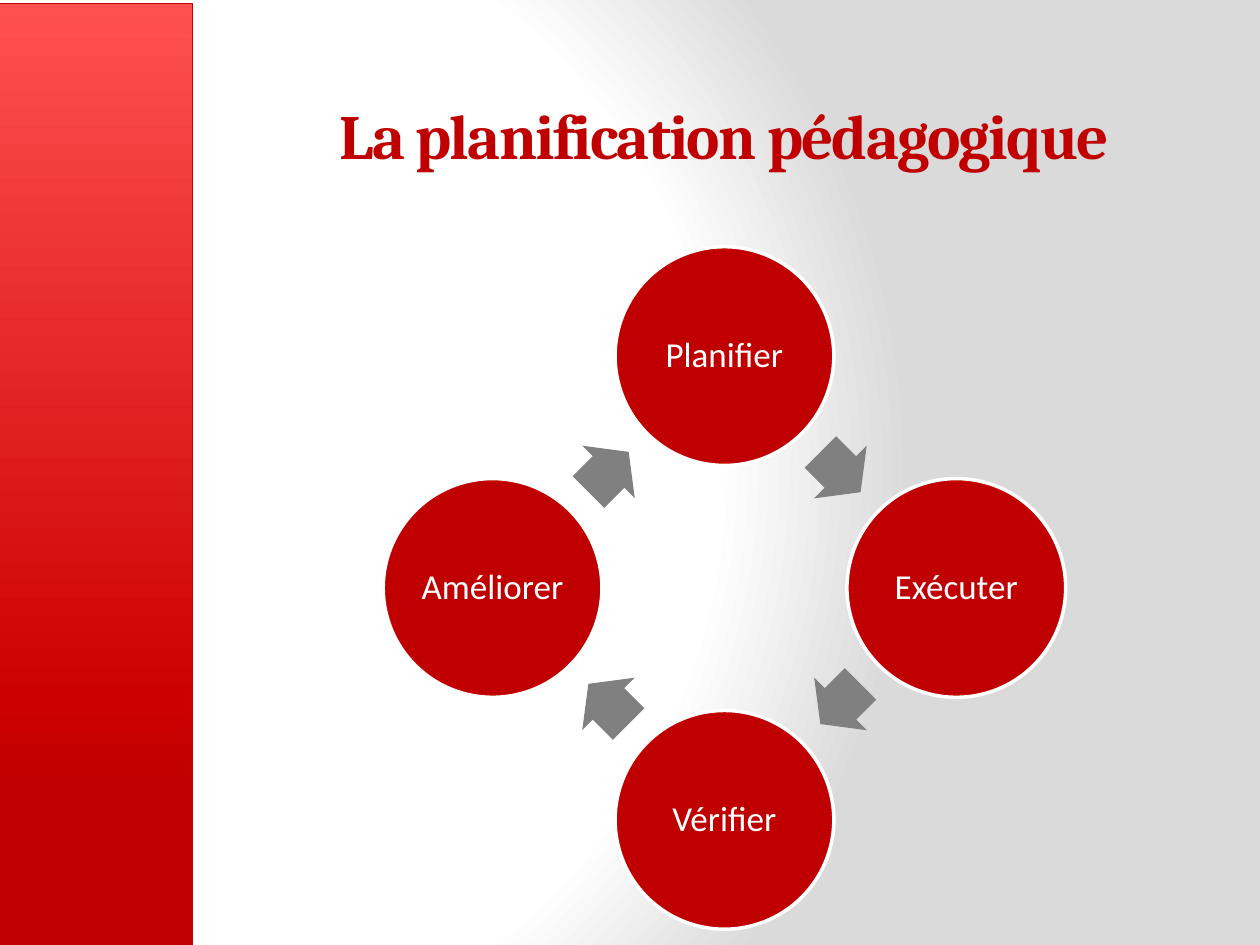
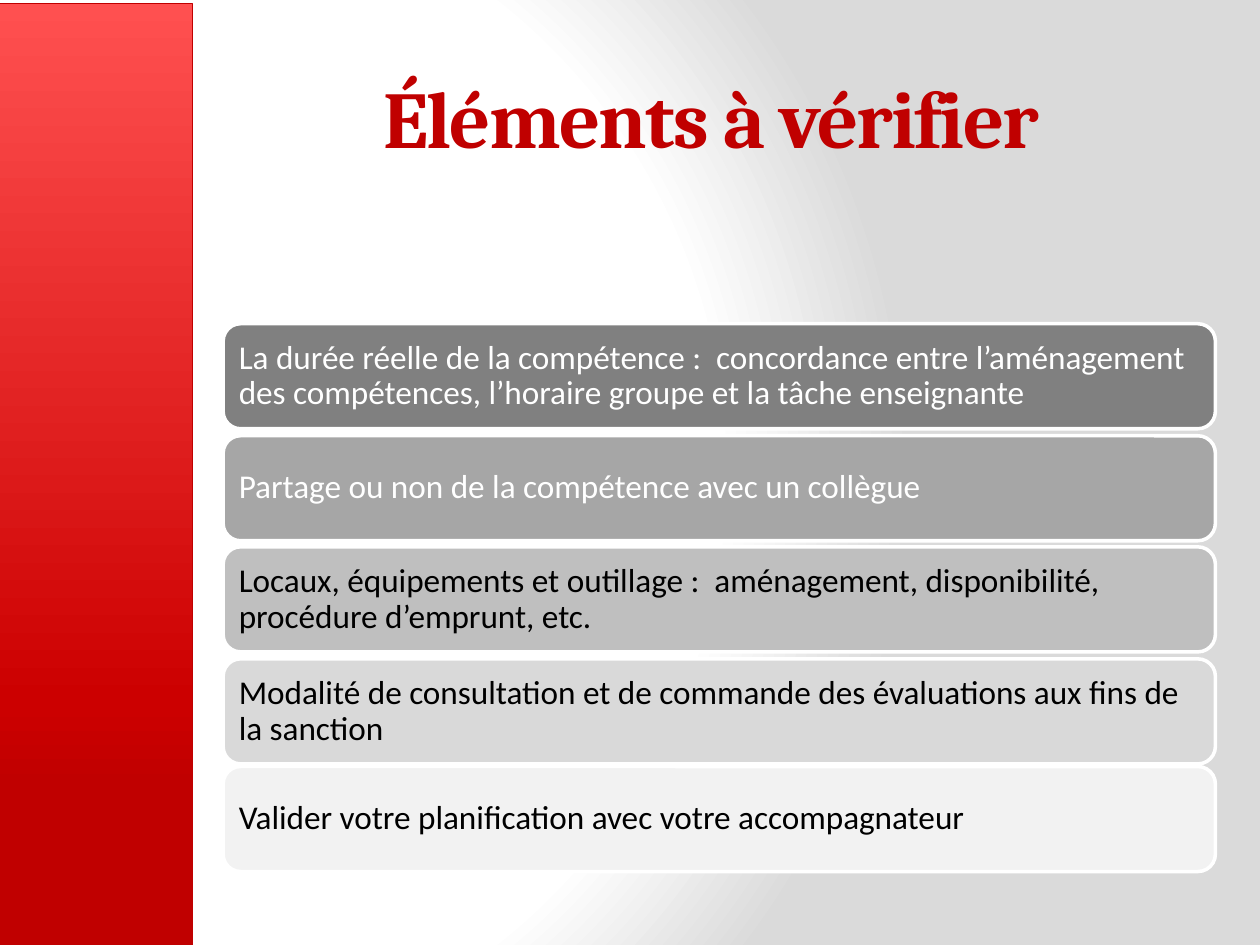
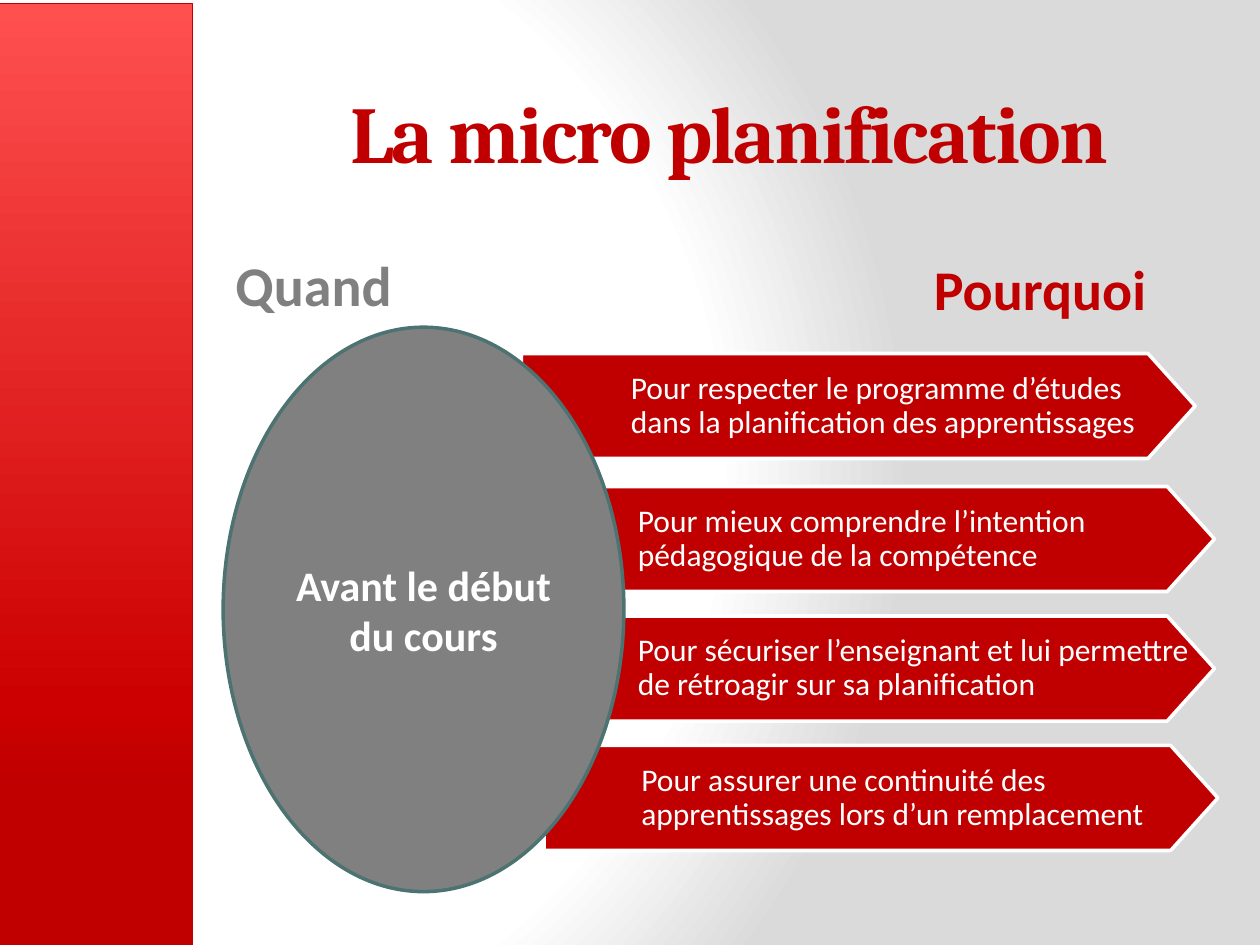
from dataclasses import dataclass

from pptx import Presentation
from pptx import oxml
from pptx.dml.color import RGBColor
from pptx.enum import shapes, text
from pptx.oxml import ns
from pptx.util import Pt


@dataclass(frozen=True)
class Theme:
    red: str = "C00000"
    grey: str = "808080"
    white: str = "FFFFFF"
    black: str = "000000"
    teal: str = "4C7372"
    band_stops: tuple = ((0, "FF5050"), (74, "CC0000"), (83, "C00000"), (100, "C00000"))
    page_stops: tuple = ((0, "FFFFFF"), (75, "FFFFFF"), (100, "DADADA"))
    bar_fills: tuple = ("808080", "A6A6A6", "BFBFBF", "D9D9D9", "F2F2F2")
    title_font: str = "Cambria"
    body_font: str = "Calibri"
    title: int = 46
    long_title: int = 36
    label: int = 32
    moment: int = 24
    step: int = 20
    check: int = 19
    reason: int = 18


theme = Theme()


def paint(shape, fill, line=None, width=2):
    """Give a shape a flat fill and an outline, without a shadow."""
    shape.shadow.inherit = False
    shape.fill.solid()
    shape.fill.fore_color.rgb = RGBColor.from_string(fill)
    if line:
        shape.line.color.rgb = RGBColor.from_string(line)
        shape.line.width = Pt(width)
    else:
        shape.line.fill.background()


def write(shape, wording, size, color, align="LEFT", anchor="MIDDLE", bold=False,
          insets=(7.2, 3.6, 7.2, 3.6), spacing=None, font=theme.body_font):
    """Set the single paragraph of a shape."""
    frame = shape.text_frame
    frame.text = wording
    frame.word_wrap = True
    frame.auto_size = text.MSO_AUTO_SIZE.NONE
    frame.vertical_anchor = text.MSO_ANCHOR[anchor]
    (frame.margin_left, frame.margin_top,
     frame.margin_right, frame.margin_bottom) = map(Pt, insets)
    para = frame.paragraphs[0]
    para.alignment = text.PP_ALIGN[align]
    para.line_spacing = spacing
    para.font.name = font
    para.font.size = Pt(size)
    para.font.bold = bold
    para.font.color.rgb = RGBColor.from_string(color)


deck = Presentation()
deck.slide_width, deck.slide_height = Pt(720), Pt(540)
master = deck.slide_master
layout = deck.slide_layouts.get_by_name("Title Only")

# Slides and their titles
titles = (
    ("La planification pédagogique", theme.long_title, (160, 32, 508, 90)),
    ("Éléments à vérifier ", theme.title, (127.5, 21.5, 567, 90)),
    ("La micro planification", theme.title, (127.5, 21.5, 578, 107)),
)
pages = []
for wording, size, place in titles:
    page = deck.slides.add_slide(layout)
    title = page.shapes.title
    title.left, title.top, title.width, title.height = map(Pt, place)
    write(title, wording, size, theme.red, "CENTER", bold=True, font=theme.title_font)
    title.text_frame.paragraphs[0].runs[0].font._element.set("spc", "-100")
    pages.append(page)
cycle_page, checks_page, micro_page = pages

# Shared background and red side band
band = cycle_page.shapes.add_shape(
    shapes.MSO_SHAPE.RECTANGLE, Pt(-12), Pt(2), Pt(122), Pt(540))
paint(band, theme.red, theme.red, 1)
layout.shapes.element.insert(2, band.element)
circle = ('<a:path path="circle">'
          '<a:fillToRect l="20000" t="50000" r="100000" b="50000"/></a:path>')
for fill, holder, stops, direction in (
    (band.fill, band.element, theme.band_stops, '<a:lin ang="5400000" scaled="0"/>'),
    (master.background.fill, master.element, theme.page_stops, circle),
):
    fill.gradient()
    flat = next(holder.iter(ns.qn("a:gradFill")))
    marks = "".join(f'<a:gs pos="{pos * 1000}"><a:srgbClr val="{color}"/></a:gs>'
                    for pos, color in stops)
    flat.getparent().replace(flat, oxml.parse_xml(
        f'<a:gradFill {ns.nsdecls("a")} rotWithShape="1">'
        f'<a:gsLst>{marks}</a:gsLst>{direction}</a:gradFill>'))

# Slide 1: cycle of four steps, each followed by an arrow
center_x, center_y, radius, diameter = 414, 336, 132.5, 125
arrow_width, arrow_height = 32.5, 42.5
steps = (("Planifier", 0, -1), ("Exécuter", 1, 0), ("Vérifier", 0, 1), ("Améliorer", -1, 0))
for index, (wording, across, down) in enumerate(steps):
    disc = cycle_page.shapes.add_shape(
        shapes.MSO_SHAPE.OVAL,
        Pt(center_x + across * radius - diameter / 2),
        Pt(center_y + down * radius - diameter / 2), Pt(diameter), Pt(diameter))
    paint(disc, theme.red, theme.white)
    write(disc, wording, theme.step, theme.white, "CENTER", insets=(2, 2, 2, 2), spacing=0.9)

    next_across, next_down = steps[(index + 1) % len(steps)][1:]
    arrow = cycle_page.shapes.add_shape(
        shapes.MSO_SHAPE.RIGHT_ARROW,
        Pt(center_x + (across + next_across) * radius / 2 - arrow_width / 2),
        Pt(center_y + (down + next_down) * radius / 2 - arrow_height / 2),
        Pt(arrow_width), Pt(arrow_height))
    arrow.adjustments[0], arrow.adjustments[1] = 0.6, 0.5
    arrow.rotation = 45 + 90 * index
    paint(arrow, theme.grey)

# Slide 2: bars that fade from dark to light
checks = (
    (185, theme.white, "La durée réelle de la compétence :  concordance entre l’aménagement "
                       "des compétences, l’horaire groupe et la tâche enseignante"),
    (249, theme.white, "Partage ou non de la compétence avec un collègue"),
    (312.5, theme.black, "Locaux, équipements et outillage :  aménagement, disponibilité, "
                         "procédure d’emprunt, etc."),
    (376.5, theme.black, "Modalité de consultation et de commande des évaluations aux fins "
                         "de la sanction"),
    (438, theme.black, "Valider votre planification avec votre accompagnateur"),
)
for (top, color, wording), fill in zip(checks, theme.bar_fills):
    bar = checks_page.shapes.add_shape(
        shapes.MSO_SHAPE.ROUNDED_RECTANGLE, Pt(127.5), Pt(top), Pt(567), Pt(60))
    paint(bar, fill, theme.white)
    write(bar, wording, theme.check, color, insets=(6, 6, 6, 6), spacing=0.9)

# Slide 3: column labels
for wording, color, left, top, width in (
    ("Pourquoi", theme.red, 526.5, 142, 170),
    ("Quand", theme.grey, 127.5, 139.5, 108),
):
    label = micro_page.shapes.add_textbox(Pt(left), Pt(top), Pt(width), Pt(46))
    write(label, wording, theme.label, color, anchor="TOP", bold=True)

# Slide 3: reasons as pointed bars
length, height, point = 385.5, 60, 27.5
reasons = (
    (297.5, 202, 62.5, "Pour respecter le programme d’études dans la planification "
                       "des apprentissages"),
    (309, 278.5, 55.5, "Pour mieux comprendre l’intention pédagogique de la compétence"),
    (309, 352.5, 55.5, "Pour sécuriser l’enseignant et lui permettre de rétroagir "
                       "sur sa planification"),
    (311, 426, 55.5, "Pour assurer une continuité des apprentissages lors d’un remplacement"),
)
for left, top, indent, wording in reasons:
    right, bottom = left + length, top + height
    outline = micro_page.shapes.build_freeform(left, bottom, scale=Pt(1))
    outline.add_line_segments((
        (right - point, bottom), (right, top + height / 2), (right - point, top), (left, top)))
    reason = outline.convert_to_shape()
    paint(reason, theme.red, theme.white)
    write(reason, wording, theme.reason, theme.white, insets=(indent, 6, 11.5, 6), spacing=0.9)

# Slide 3: moment, in front of the bars
moment = micro_page.shapes.add_shape(
    shapes.MSO_SHAPE.OVAL, Pt(127.5), Pt(187), Pt(229), Pt(322.5))
paint(moment, theme.grey, theme.teal)
write(moment, "Avant le début du cours", theme.moment, theme.white, "CENTER", bold=True)

deck.save("out.pptx")
